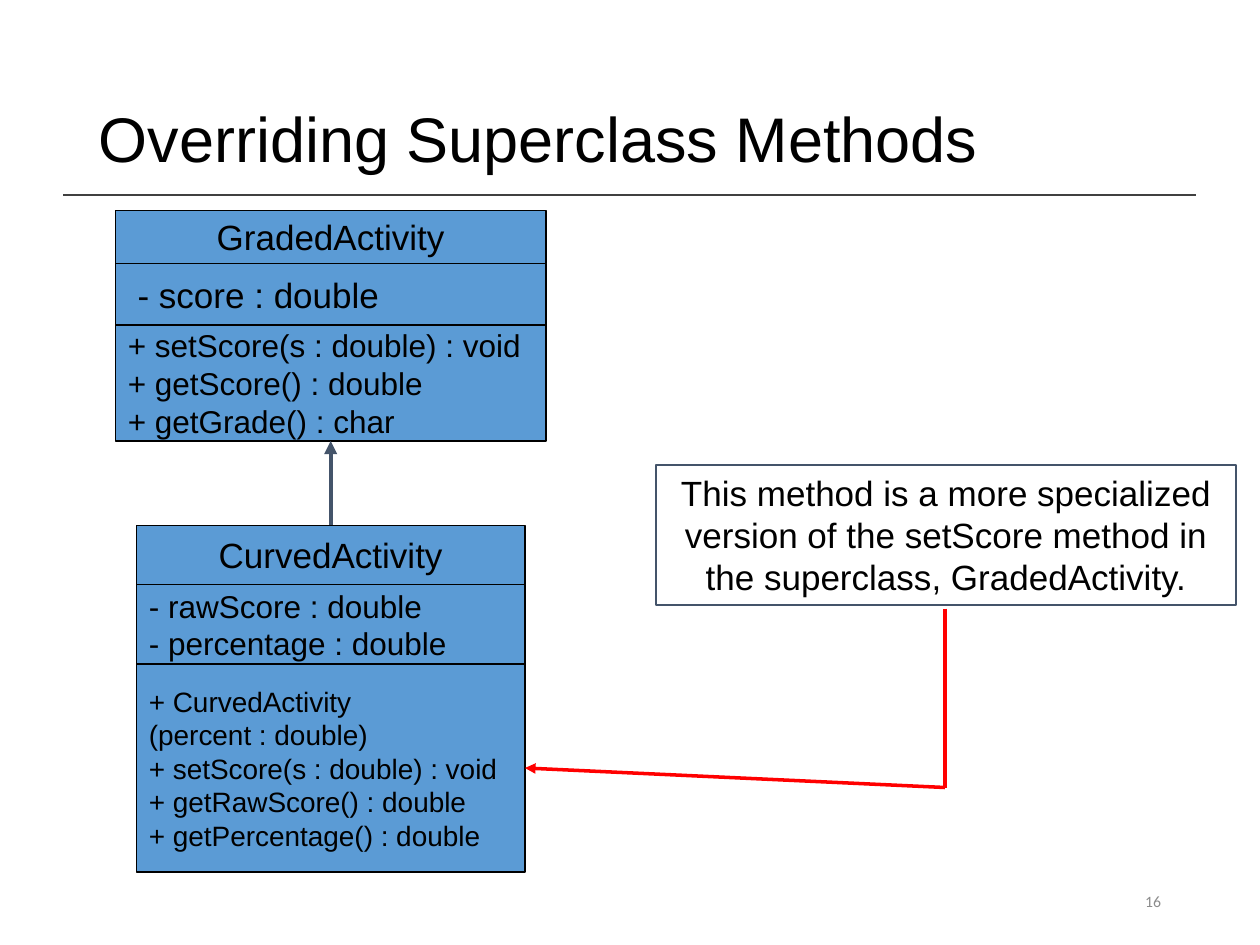
"""Build a UML slide on overriding superclass methods."""
from dataclasses import dataclass

from lxml.etree import SubElement
from pptx import Presentation
from pptx.dml.color import RGBColor
from pptx.enum.shapes import MSO_CONNECTOR as CONN, MSO_SHAPE as SHAPE
from pptx.enum.text import MSO_ANCHOR as ANCHOR, PP_ALIGN as ALIGN
from pptx.oxml.ns import qn
from pptx.shapes.autoshape import Shape
from pptx.shapes.connector import Connector
from pptx.slide import Slide
from pptx.util import Pt

BLACK = RGBColor(0x00, 0x00, 0x00)
BLUE = RGBColor(0x5B, 0x9B, 0xD5)
SLATE = RGBColor(0x44, 0x54, 0x6A)
RED = RGBColor(0xFF, 0x00, 0x00)
RULE_GRAY = RGBColor(0x40, 0x40, 0x40)
NUMBER_GRAY = RGBColor(0x8C, 0x8C, 0x8C)
TOP, LEFT, BOTTOM, RIGHT = range(4)


@dataclass
class Section:
    height: float
    size: float
    lines: list[str]
    align: ALIGN = ALIGN.LEFT


@dataclass
class UmlClass:
    left: float
    top: float
    width: float
    sections: list[Section]


GRADED = UmlClass(66, 120.25, 246, [
    Section(30.25, 20, ["GradedActivity"], ALIGN.CENTER),
    Section(35.25, 20, [" - score : double"]),
    Section(66.25, 18, ["+ setScore(s : double) : void", "+ getScore() : double",
                        "+ getGrade() : char"]),
])
CURVED = UmlClass(78, 300.25, 222, [
    Section(33.75, 20, ["CurvedActivity"], ALIGN.CENTER),
    Section(45.5, 18, ["- rawScore : double", "- percentage : double"]),
    Section(118.75, 16, ["+ CurvedActivity", "(percent : double)",
                         "+ setScore(s : double) : void", "+ getRawScore() : double",
                         "+ getPercentage() : double"]),
])


def write(sp: Shape, lines: list[str], size: float, align: ALIGN = ALIGN.LEFT,
          color: RGBColor = BLACK, font: str = "Arial", wrap: bool = True,
          anchor: ANCHOR = ANCHOR.MIDDLE, spacing: float = 1.0) -> None:
    tf = sp.text_frame
    tf.word_wrap = wrap
    tf.vertical_anchor = anchor
    tf.text = "\n".join(lines)
    for p in tf.paragraphs:
        p.alignment = align
        p.line_spacing = spacing
        p.font.name = font
        p.font.size = Pt(size)
        p.font.color.rgb = color


def add_label(s: Slide, box: tuple[float, ...], text: str, size: float, **style) -> None:
    write(s.shapes.add_textbox(*map(Pt, box)), [text], size, **style)


def add_class(s: Slide, uml: UmlClass) -> list[Shape]:
    group = s.shapes.add_group_shape()
    boxes = []
    top = uml.top
    for sec in uml.sections:
        sp = group.shapes.add_shape(SHAPE.RECTANGLE, Pt(uml.left), Pt(top),
                                    Pt(uml.width), Pt(sec.height))
        sp.shadow.inherit = False
        sp.fill.solid()
        sp.fill.fore_color.rgb = BLUE
        sp.line.color.rgb = BLACK
        sp.line.width = Pt(0.75)
        write(sp, sec.lines, sec.size, sec.align, wrap=False)
        boxes.append(sp)
        top += sec.height
    return boxes


def add_line(s: Slide, start: tuple[float, float], end: tuple[float, float],
             color: RGBColor, width: float, arrow: bool = False) -> Connector:
    line = s.shapes.add_connector(CONN.STRAIGHT, *map(Pt, start + end))
    line.line.color.rgb = color
    line.line.width = Pt(width)
    if arrow:
        SubElement(line.line._get_or_add_ln(), qn("a:tailEnd"), type="triangle")
    SubElement(line._element.spPr, qn("a:effectLst"))
    return line


def add_callout(s: Slide, text: str) -> None:
    sp = s.shapes.add_shape(SHAPE.RECTANGLE, Pt(375), Pt(265.75), Pt(331.25), Pt(80))
    sp.shadow.inherit = False
    sp.fill.background()
    sp.line.color.rgb = SLATE
    sp.line.width = Pt(1)
    write(sp, [text], 20, ALIGN.CENTER, anchor=ANCHOR.TOP)


def main() -> None:
    prs = Presentation()
    prs.slide_width, prs.slide_height = Pt(720), Pt(540)
    s = prs.slides.add_slide(prs.slide_layouts[6])

    add_line(s, (36, 111.5), (683.5, 111.5), RULE_GRAY, 1)
    add_label(s, (49.5, 28.75, 621, 104.5), "Overriding Superclass Methods", 36, spacing=0.9)

    graded = add_class(s, GRADED)
    curved = add_class(s, CURVED)
    inherits = add_line(s, (189, 300.25), (189, 252), SLATE, 2.5, arrow=True)
    inherits.begin_connect(curved[0], TOP)
    inherits.end_connect(graded[-1], BOTTOM)

    add_callout(s, "This method is a more specialized version of the setScore method "
                   "in the superclass, GradedActivity.")
    corner = (540, 450)
    pointer = add_line(s, corner, (300, 439), RED, 2, arrow=True)
    pointer.end_connect(curved[-1], RIGHT)
    add_line(s, (540, 347.75), corner, RED, 2)

    add_label(s, (508.5, 500.5, 162, 28.75), "16", 9, align=ALIGN.RIGHT,
              color=NUMBER_GRAY, font="Calibri")
    prs.save("out.pptx")


if __name__ == "__main__":
    main()
